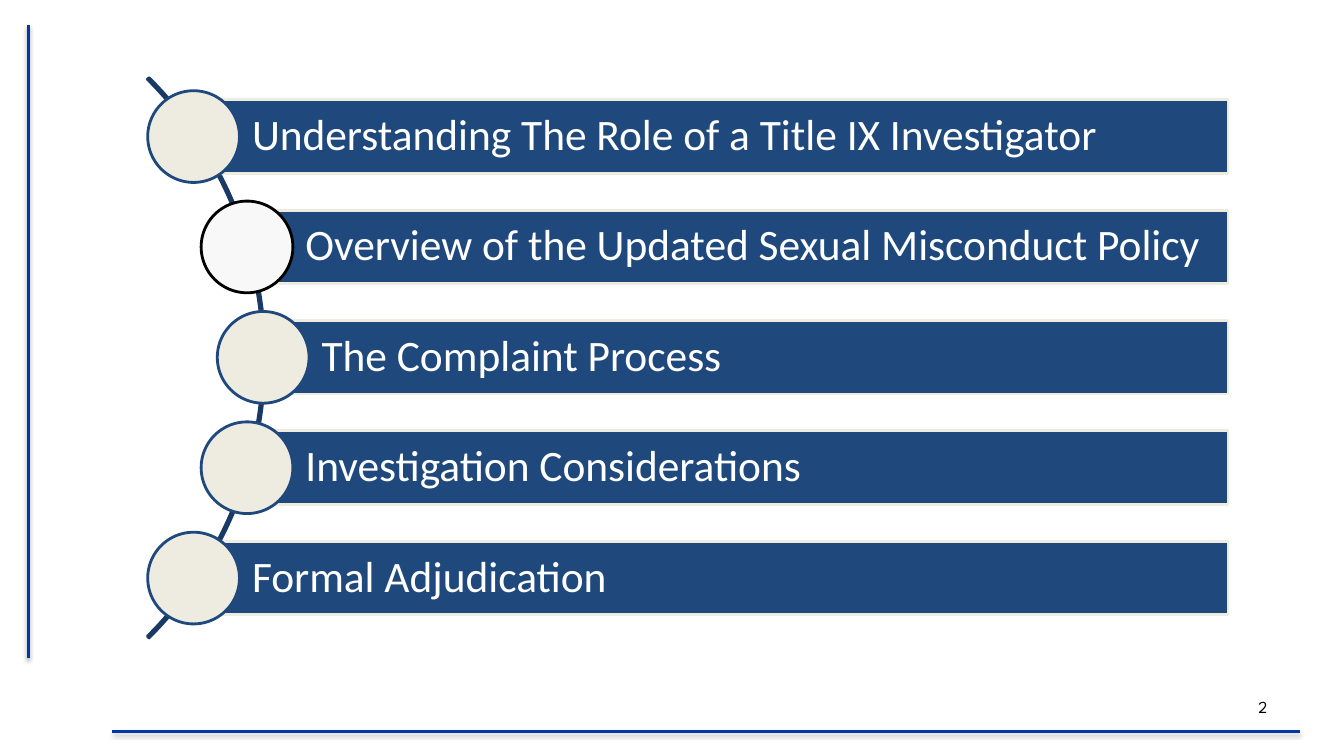
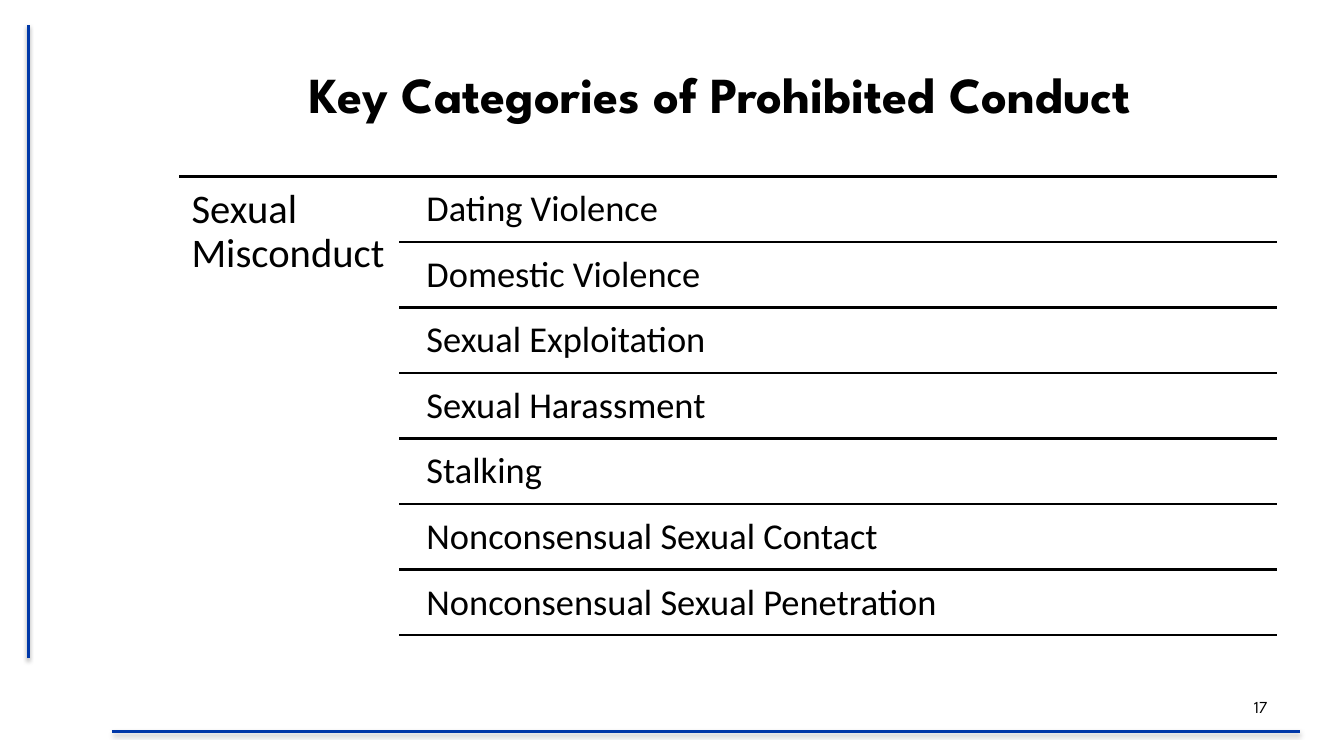
from lxml import etree
from pptx import Presentation
from pptx.dml.color import RGBColor
from pptx.enum.shapes import MSO_CONNECTOR, MSO_SHAPE
from pptx.enum.text import MSO_ANCHOR, PP_ALIGN
from pptx.oxml.ns import qn
from pptx.util import Inches, Pt

STRAIGHT = MSO_CONNECTOR.STRAIGHT
RECTANGLE, OVAL, BLOCK_ARC = MSO_SHAPE.RECTANGLE, MSO_SHAPE.OVAL, MSO_SHAPE.BLOCK_ARC
TOP, MIDDLE = MSO_ANCHOR.TOP, MSO_ANCHOR.MIDDLE
LEFT, CENTER, RIGHT = PP_ALIGN.LEFT, PP_ALIGN.CENTER, PP_ALIGN.RIGHT

BLACK = RGBColor(0x00, 0x00, 0x00)
WHITE = RGBColor(0xFF, 0xFF, 0xFF)
RULE_BLUE = RGBColor(0x00, 0x38, 0xA8)
NAVY = RGBColor(0x1F, 0x49, 0x7D)
ARC_NAVY = RGBColor(0x19, 0x3A, 0x64)
CREAM = RGBColor(0xEE, 0xEC, 0xE1)
PALE_GREY = RGBColor(0xF8, 0xF8, 0xF8)

LINE_WIDTH = Pt(2)
DEFAULT_INSETS = (0.1, 0.05, 0.1, 0.05)

TITLE = {"name": "League Spartan", "size": Pt(36), "bold": True, "color": BLACK}
NUMBER = {"name": "League Spartan", "size": Pt(12), "color": BLACK}
AGENDA = {"name": "Calibri", "size": Pt(31), "color": WHITE}
HEADING = {"name": "Calibri", "size": Pt(29), "color": BLACK}
CATEGORY = {"name": "Calibri", "size": Pt(26), "color": BLACK}

# Content: agenda text, centre of its circle, circle fill and outline
AGENDA_ITEMS = [
    ("Understanding The Role of a Title IX Investigator", 1.92, CREAM, NAVY),
    ("Overview of the Updated Sexual Misconduct Policy", 2.45, PALE_GREY, BLACK),
    ("The Complaint Process", 2.61, CREAM, NAVY),
    ("Investigation Considerations", 2.45, CREAM, NAVY),
    ("Formal Adjudication", 1.92, CREAM, NAVY),
]
CONDUCT_TITLE = "Key Categories of Prohibited Conduct"
CONDUCT_HEADING = "Sexual Misconduct"
CONDUCT_CATEGORIES = [
    "Dating Violence",
    "Domestic Violence",
    "Sexual Exploitation",
    "Sexual Harassment",
    "Stalking",
    "Nonconsensual Sexual Contact",
    "Nonconsensual Sexual Penetration",
]


def write(shape, text, style, insets=DEFAULT_INSETS, anchor=TOP, align=LEFT, spacing=1.0):
    frame = shape.text_frame
    frame.word_wrap = True
    frame.vertical_anchor = anchor
    for side, inset in zip(("left", "top", "right", "bottom"), insets):
        setattr(frame, f"margin_{side}", Inches(inset))
    para = frame.paragraphs[0]
    para.alignment = align
    para.line_spacing = spacing
    span = para.add_run()
    span.text = text
    for key, value in style.items():
        if key == "color":
            span.font.color.rgb = value
        else:
            setattr(span.font, key, value)


def add_text(page, at, text, style, **layout):
    box = page.shapes.add_textbox(*map(Inches, at))
    write(box, text, style, **layout)


def add_figure(page, kind, at, fill, outline):
    shape = page.shapes.add_shape(kind, *map(Inches, at))
    shape.shadow.inherit = False
    if fill is None:
        shape.fill.background()
    else:
        shape.fill.solid()
        shape.fill.fore_color.rgb = fill
    shape.line.color.rgb = outline
    shape.line.width = LINE_WIDTH
    return shape


def add_rule(page, start, end, color, shadow=False):
    rule = page.shapes.add_connector(STRAIGHT, *map(Inches, start + end))
    rule.line.color.rgb = color
    rule.line.width = LINE_WIDTH
    effects = etree.SubElement(rule._element.spPr, qn("a:effectLst"))
    if shadow:
        outer = etree.SubElement(effects, qn("a:outerShdw"), blurRad=str(Pt(3.1)),
                                 dist=str(Pt(1.6)), dir="5400000", rotWithShape="0")
        tint = etree.SubElement(outer, qn("a:srgbClr"), val=str(BLACK))
        etree.SubElement(tint, qn("a:alpha"), val="38000")


def add_page(deck, number):
    """Blank slide with the shared blue rules and slide number."""
    page = deck.slides.add_slide(deck.slide_layouts[6])
    add_rule(page, (0.28, 6.53), (0.28, 0.25), RULE_BLUE, shadow=True)
    add_rule(page, (1.11, 7.26), (12.89, 7.26), RULE_BLUE, shadow=True)
    add_text(page, (11.86, 6.81, 0.81, 0.4), str(number), NUMBER, anchor=MIDDLE, align=RIGHT)
    return page


def build_agenda(deck):
    page = add_page(deck, 2)
    arc = add_figure(page, BLOCK_ARC, (-5.23, -0.38, 7.86, 7.86), None, ARC_NAVY)
    for index, value in enumerate((189, 27, 0.003)):
        arc.adjustments[index] = value

    # Each bar starts at the centre of its circle
    first_middle, pitch = 1.355, 1.095
    bar_right, bar_height, circle = 12.18, 0.73, 0.91
    for row, (text, center, fill, outline) in enumerate(AGENDA_ITEMS):
        middle = first_middle + row * pitch
        bar = add_figure(page, RECTANGLE,
                         (center, middle - bar_height / 2, bar_right - center, bar_height),
                         NAVY, CREAM)
        write(bar, text, AGENDA, insets=(0.58, 0.09, 0.09, 0.09), anchor=MIDDLE, spacing=0.9)
        add_figure(page, OVAL, (center - circle / 2, middle - circle / 2, circle, circle),
                   fill, outline)


def build_conduct(deck):
    page = add_page(deck, 17)
    add_text(page, (1.7, 0.3, 10.89, 1.25), CONDUCT_TITLE, TITLE, anchor=MIDDLE, align=CENTER)

    # Heading column under the top rule
    left, right, top, heading_width, pitch = 1.78, 12.67, 1.75, 2.18, 0.65
    add_rule(page, (left, top), (right, top), BLACK)
    add_text(page, (left, top, heading_width, 4.58), CONDUCT_HEADING, HEADING,
             insets=(0.12,) * 4, spacing=0.9)

    # Categories, each closed by a rule
    rule_left, text_left = left + heading_width, 4.12
    for row, category in enumerate(CONDUCT_CATEGORIES):
        row_top = top + row * pitch
        add_text(page, (text_left, row_top + 0.03, right - text_left, 0.62), category,
                 CATEGORY, insets=(0.11,) * 4, spacing=0.9)
        add_rule(page, (rule_left, row_top + pitch), (right, row_top + pitch), BLACK)


def main():
    deck = Presentation()
    deck.slide_width, deck.slide_height = Inches(13.33), Inches(7.5)
    build_agenda(deck)
    build_conduct(deck)
    deck.save("out.pptx")


if __name__ == "__main__":
    main()
